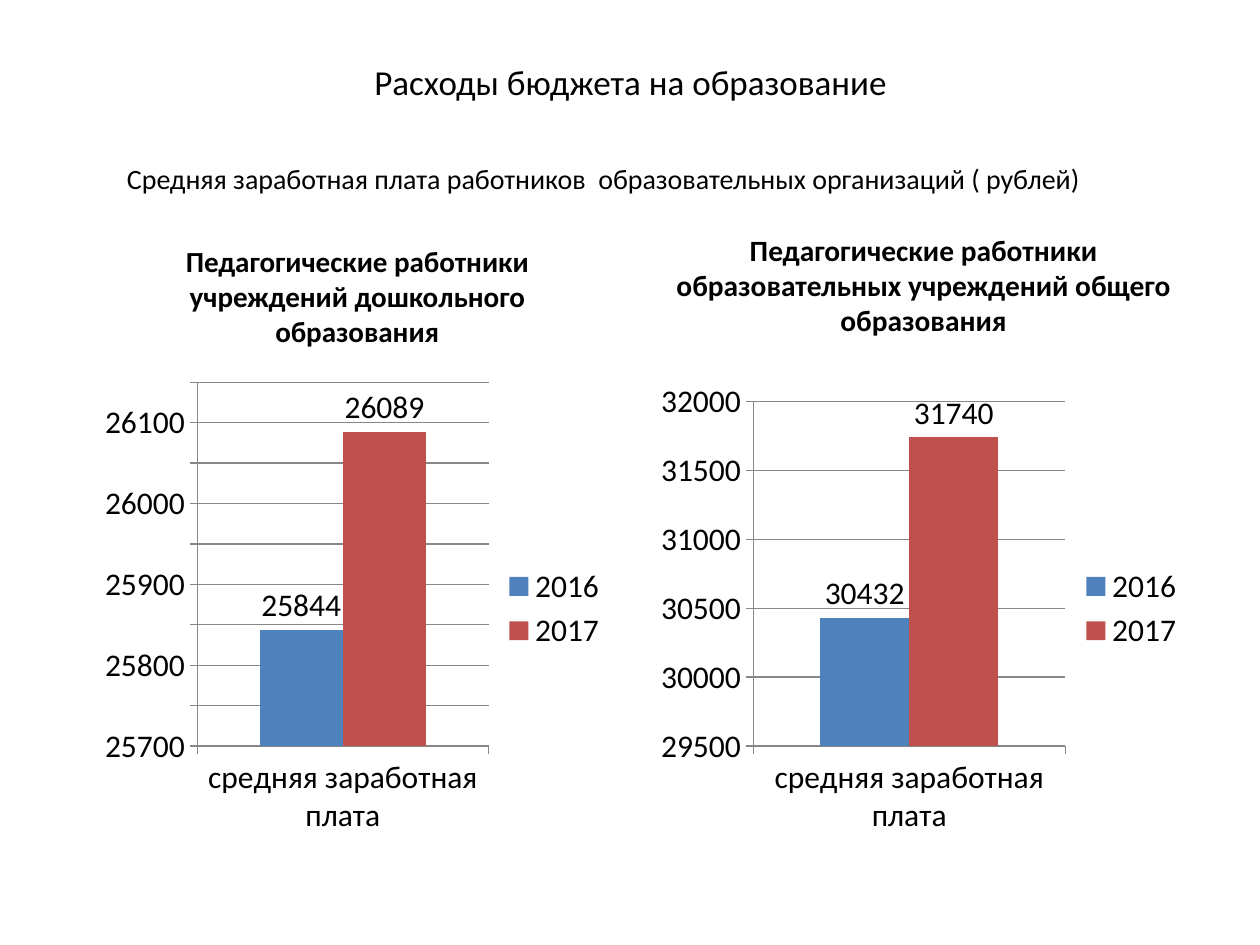
from pptx import Presentation
from pptx.chart.data import CategoryChartData
from pptx.dml.color import RGBColor
from pptx.enum.chart import XL_CHART_TYPE as ChartType
from pptx.enum.chart import XL_LABEL_POSITION as LabelPosition
from pptx.enum.chart import XL_LEGEND_POSITION as LegendPosition
from pptx.enum.chart import XL_TICK_MARK as TickMark
from pptx.enum.text import MSO_ANCHOR as Anchor
from pptx.enum.text import PP_ALIGN as Align
from pptx.util import Inches, Pt

BLACK = "000000"
AXIS_GRAY = "868686"
YEAR_COLORS = {"2016": "4F81BD", "2017": "C0504D"}
CATEGORY = "средняя заработная плата"
CHART_TOP, CHART_HEIGHT = 2.96, 3.74

GROUPS = [
    {
        "heading": "Педагогические работники учреждений дошкольного образования",
        "left": 0.75, "width": 4.17, "heading_height": 0.87, "size": 16.6,
        "wages": [25844, 26089],
        "scale": {"minimum_scale": 25700, "maximum_scale": 26150, "major_unit": 50},
    },
    {
        "heading": "Педагогические работники образовательных учреждений общего образования",
        "left": 5.16, "width": 4.34, "heading_height": 0.79, "size": 16.8,
        "wages": [30432, 31740],
        "scale": {"minimum_scale": 29500, "maximum_scale": 32000, "major_unit": 500},
    },
]


def color(value):
    return RGBColor.from_string(value)


def set_all(target, values):
    for name, value in values.items():
        setattr(target, name, value)


def style_font(font, size, bold=False):
    set_all(font, {"name": "Calibri", "size": Pt(size), "bold": bold})
    font.color.rgb = color(BLACK)


def add_text(page, bounds, text, size, bold=False, align=Align.CENTER, anchor=Anchor.MIDDLE):
    box = page.shapes.add_textbox(*map(Inches, bounds))
    set_all(box.text_frame, {"word_wrap": True, "vertical_anchor": anchor})
    para = box.text_frame.paragraphs[0]
    para.alignment = align
    span = para.add_run()
    span.text = text
    style_font(span.font, size, bold)


def style_axis(axis):
    set_all(axis, {"major_tick_mark": TickMark.OUTSIDE, "minor_tick_mark": TickMark.NONE})
    axis.format.line.color.rgb = color(AXIS_GRAY)


def style_series(series):
    series.format.fill.solid()
    series.format.fill.fore_color.rgb = color(YEAR_COLORS[series.name])
    series.invert_if_negative = False
    labels = series.data_labels
    set_all(labels, {"show_value": True, "position": LabelPosition.OUTSIDE_END})
    style_font(labels.font, 18)


def add_wage_chart(page, bounds, wages, scale):
    data = CategoryChartData(number_format="General")
    data.categories = [CATEGORY]
    for year, wage in zip(YEAR_COLORS, wages):
        data.add_series(year, [wage])
    frame = page.shapes.add_chart(ChartType.COLUMN_CLUSTERED, *map(Inches, bounds), data)
    chart = frame.chart
    set_all(chart, {"has_title": False, "has_legend": True})
    style_font(chart.font, 18)
    set_all(chart.legend, {"position": LegendPosition.RIGHT, "include_in_layout": False})
    set_all(chart.plots[0], {"gap_width": 150, "overlap": 0, "vary_by_categories": False})
    for series in chart.plots[0].series:
        style_series(series)
    for axis in (chart.category_axis, chart.value_axis):
        style_axis(axis)
    set_all(chart.value_axis, {"has_major_gridlines": True, **scale})
    chart.value_axis.major_gridlines.format.line.color.rgb = color(AXIS_GRAY)


def add_group(page, group):
    left, width = group["left"], group["width"]
    add_text(page, (left, 1.94, width, group["heading_height"]), group["heading"],
             group["size"], bold=True, anchor=Anchor.BOTTOM)
    add_wage_chart(page, (left, CHART_TOP, width, CHART_HEIGHT), group["wages"], group["scale"])


def main():
    deck = Presentation()
    set_all(deck, {"slide_width": Inches(10), "slide_height": Inches(7.5)})
    page = deck.slides.add_slide(deck.slide_layouts[6])
    add_text(page, (0.51, 0.3, 8.99, 0.69), "Расходы бюджета на образование", 20)
    for group in GROUPS:
        add_group(page, group)
    add_text(page, (0.91, 1.23, 8.27, 0.37),
             "Средняя заработная плата работников  образовательных организаций ( рублей)",
             16, align=Align.LEFT, anchor=Anchor.TOP)
    deck.save("out.pptx")


if __name__ == "__main__":
    main()
